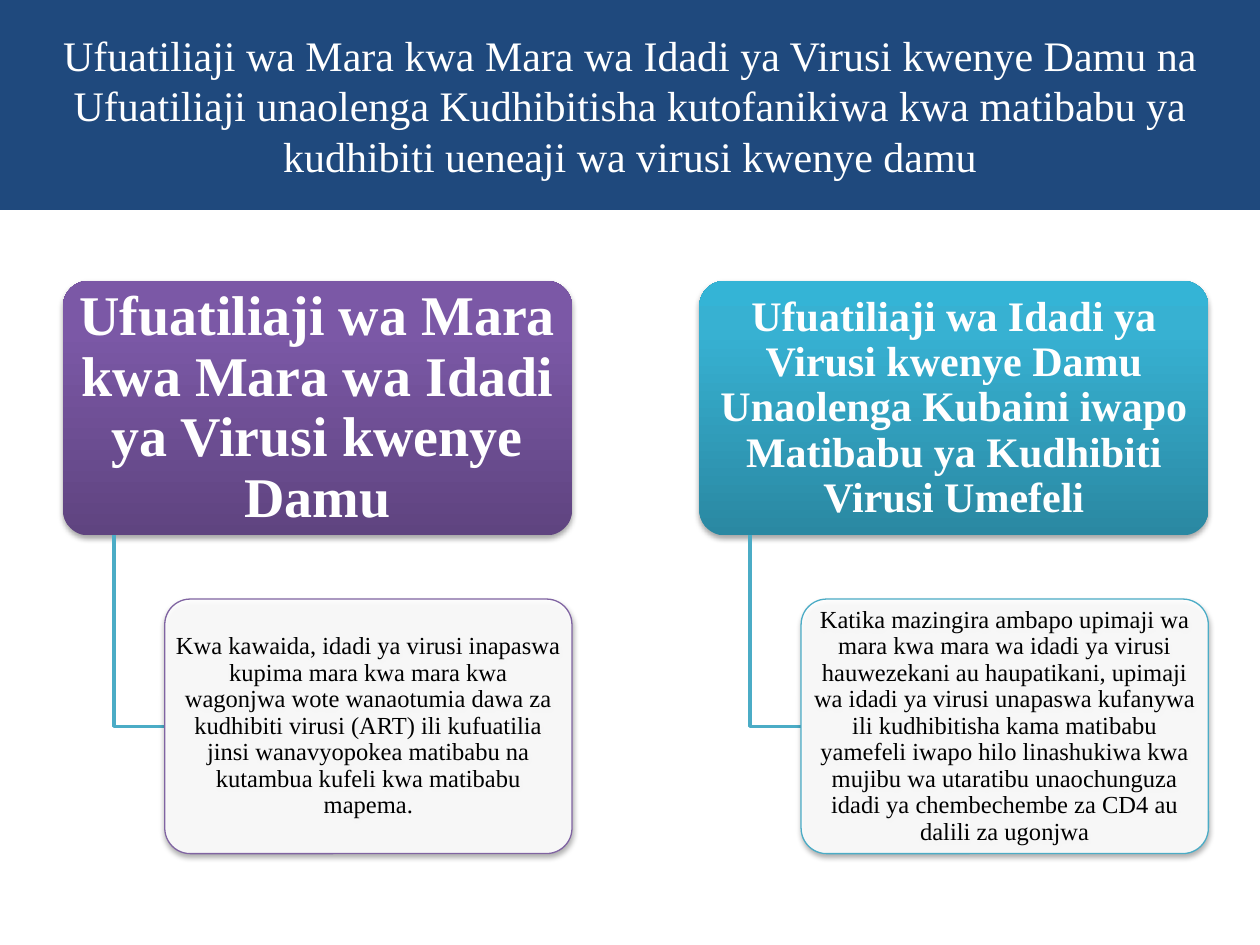
from lxml import etree
from pptx import Presentation
from pptx import util as u
from pptx.dml.color import RGBColor
from pptx.enum import shapes, text
from pptx.oxml import ns

NAVY = RGBColor(0x1F, 0x49, 0x7D)
WHITE = RGBColor(0xFF, 0xFF, 0xFF)
BLACK = RGBColor(0, 0, 0)
PURPLE = RGBColor(0x80, 0x64, 0xA2)
TEAL = RGBColor(0x4B, 0xAC, 0xC6)
PURPLE_STOPS = (
    (0, RGBColor(0x5F, 0x44, 0x80)),
    (80, RGBColor(0x7B, 0x58, 0xA6)),
    (100, RGBColor(0x7C, 0x57, 0xA8)),
)
TEAL_STOPS = (
    (0, RGBColor(0x2A, 0x88, 0xA2)),
    (80, RGBColor(0x37, 0xB1, 0xD2)),
    (100, RGBColor(0x34, 0xB4, 0xD6)),
)

FONT = "Times New Roman"
TITLE = (
    "Ufuatiliaji wa Mara kwa Mara wa Idadi ya Virusi kwenye Damu na "
    "Ufuatiliaji unaolenga Kudhibitisha kutofanikiwa kwa matibabu ya "
    "kudhibiti ueneaji wa virusi kwenye damu"
)
COLUMNS = (
    dict(
        heading="Ufuatiliaji wa Mara kwa Mara wa Idadi ya Virusi kwenye Damu",
        size=32, inset=5, stops=PURPLE_STOPS, outline=PURPLE,
        detail="Kwa kawaida, idadi ya virusi inapaswa kupima mara kwa mara kwa "
               "wagonjwa wote wanaotumia dawa za kudhibiti virusi (ART) ili "
               "kufuatilia jinsi wanavyopokea matibabu na kutambua kufeli kwa "
               "matibabu mapema.",
    ),
    dict(
        heading="Ufuatiliaji wa Idadi ya Virusi kwenye Damu Unaolenga Kubaini "
                "iwapo Matibabu ya Kudhibiti Virusi Umefeli",
        size=24, inset=3.6, stops=TEAL_STOPS, outline=TEAL,
        detail="Katika mazingira ambapo upimaji wa mara kwa mara wa idadi ya "
               "virusi hauwezekani au haupatikani, upimaji wa idadi ya virusi "
               "unapaswa kufanywa ili kudhibitisha kama matibabu yamefeli iwapo "
               "hilo linashukiwa kwa mujibu wa utaratibu unaochunguza idadi ya "
               "chembechembe za CD4 au dalili za ugonjwa",
    ),
)


def add_node(parent, tag, **attributes):
    return etree.SubElement(parent, ns.qn(tag), attributes)


def write_text(frame, words, *, size, color, bold=False, spacing=None):
    frame.word_wrap = True
    frame.auto_size = text.MSO_AUTO_SIZE.NONE
    frame.vertical_anchor = text.MSO_ANCHOR.MIDDLE
    para = frame.paragraphs[0]
    para.alignment = text.PP_ALIGN.CENTER
    para.line_spacing = spacing
    span = para.add_run()
    span.text = words
    span.font.name = FONT
    span.font.size = u.Pt(size)
    span.font.bold = bold
    span.font.color.rgb = color


def fill_gradient(shape, stops):
    shape.fill.gradient()
    gradient = shape.fill._xPr.find(ns.qn("a:gradFill"))
    stop_list = gradient.find(ns.qn("a:gsLst"))
    for stop in list(stop_list):
        stop_list.remove(stop)
    for position, color in stops:
        stop = add_node(stop_list, "a:gs", pos=str(position * 1000))
        add_node(stop, "a:srgbClr", val=str(color))
    shape.fill.gradient_angle = 90


def add_card(slide, box, words, *, inset, **text_format):
    left, top, width, height = box
    card = slide.shapes.add_shape(
        shapes.MSO_SHAPE.ROUNDED_RECTANGLE,
        u.Pt(left), u.Pt(top), u.Pt(width), u.Pt(height))
    card.adjustments[0] = 0.1
    frame = card.text_frame
    frame.margin_left = frame.margin_right = u.Pt(inset)
    frame.margin_top = frame.margin_bottom = u.Pt(inset * 0.6)
    write_text(frame, words, spacing=0.9, **text_format)
    card.shadow.inherit = False
    effects = card._element.spPr.find(ns.qn("a:effectLst"))
    shadow = add_node(
        effects, "a:outerShdw", blurRad=str(u.Pt(3.1)), dist=str(u.Pt(1.8)),
        dir="5400000", rotWithShape="0")
    shade = add_node(shadow, "a:srgbClr", val=str(BLACK))
    add_node(shade, "a:alpha", val="35000")
    return card


def add_elbow(slide, left, top, right, bottom):
    start_x, start_y, end_x, end_y = map(u.Pt, (left, top, right, bottom))
    builder = slide.shapes.build_freeform(start_x, start_y)
    builder.add_line_segments([(start_x, end_y), (end_x, end_y)], close=False)
    elbow = builder.convert_to_shape()
    elbow.fill.background()
    elbow.line.color.rgb = TEAL
    elbow.line.width = u.Pt(2)
    elbow.shadow.inherit = False


def add_column(slide, box, *, heading, size, inset, stops, outline, detail):
    left, top, width, height = box
    card_height = height * 4 / 9
    detail_left = left + width * 0.2
    detail_top = top + height - card_height

    head = add_card(slide, (left, top, width, card_height), heading,
                    inset=inset, size=size, color=WHITE, bold=True)
    fill_gradient(head, stops)
    head.line.fill.background()

    add_elbow(slide, left + width * 0.1, top + card_height,
              detail_left, detail_top + card_height / 2)

    body = add_card(slide, (detail_left, detail_top, width * 0.8, card_height),
                    detail, inset=2.1, size=14, color=BLACK)
    body.fill.solid()
    body.fill.fore_color.rgb = WHITE
    tint = body._element.spPr.find(ns.qn("a:solidFill"))[0]
    add_node(tint, "a:alpha", val="90000")
    body.line.color.rgb = outline
    body.line.width = u.Pt(0.75)


def add_title(slide, box):
    title = slide.shapes.title
    title.left, title.top, title.width, title.height = map(u.Pt, box)
    title.fill.solid()
    title.fill.fore_color.rgb = NAVY
    write_text(title.text_frame, TITLE, size=24, color=WHITE)


def main():
    deck = Presentation()
    deck.slide_width, deck.slide_height = u.Pt(720), u.Pt(540)
    slide = deck.slides.add_slide(deck.slide_layouts[5])
    add_title(slide, (0, 0, 720, 120))
    width, height = 290.9, 327.3
    for index, column in enumerate(COLUMNS):
        left = 36 + index * width * 1.25
        add_column(slide, (left, 160.5, width, height), **column)
    deck.save("out.pptx")


if __name__ == "__main__":
    main()
